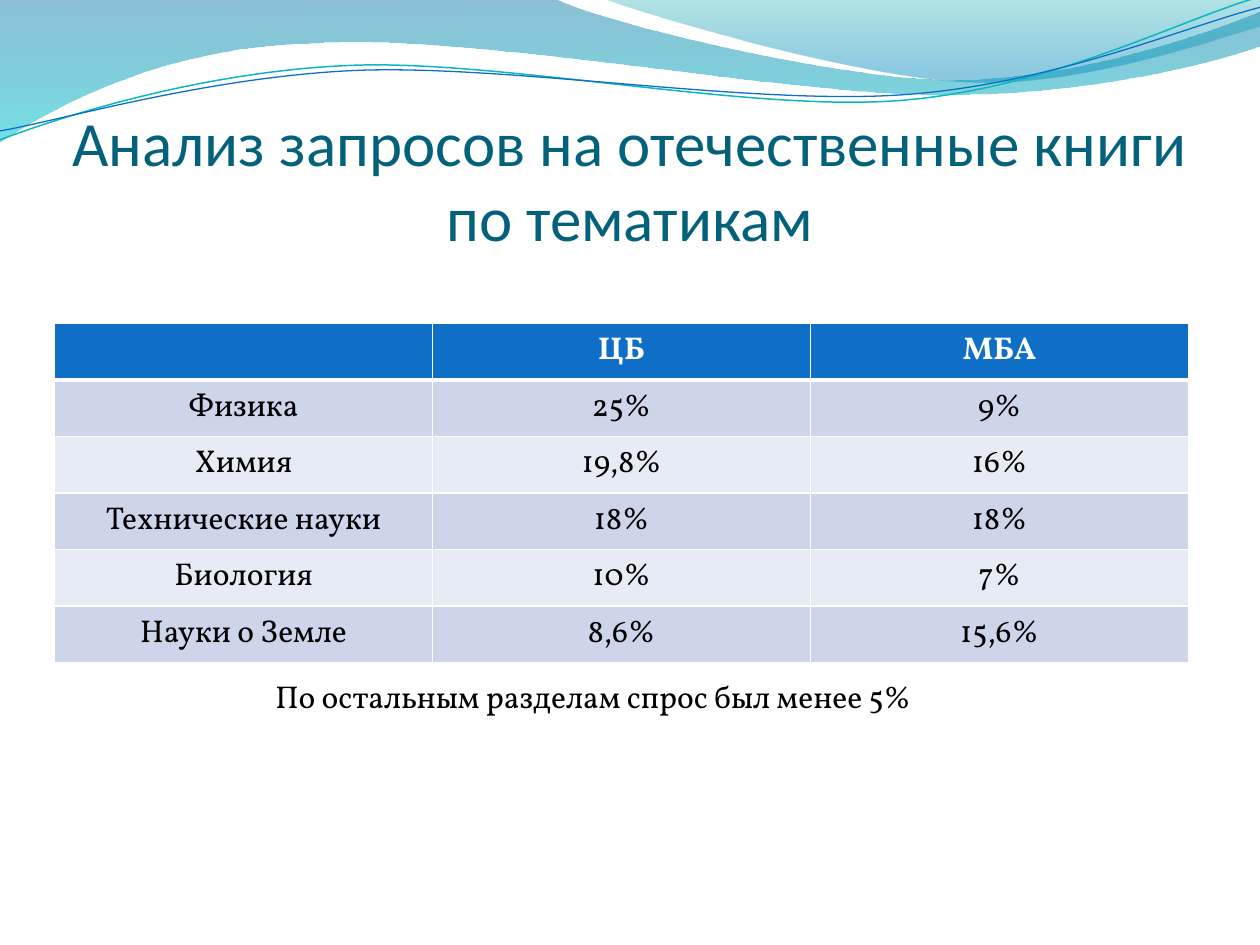
from lxml import etree
from pptx import Presentation
from pptx import util as u
from pptx.dml.color import RGBColor
from pptx.enum import text
from pptx.oxml import ns

COLORS = {
    "title": "04617B", "black": "000000", "white": "FFFFFF",
    "header": "0F6FC6", "odd": "CCD5EA", "even": "E7EBF5",
    "deep": "0074A1", "aqua": "00C6CF", "teal": "00A1A9", "sky": "008BBF",
    "teal_line": "0AB8BF", "blue_line": "0F6FC6",
}


def add_outline(start, segments, closed):
    """Draw line segments (1 point) and cubic curves (3 points), in cm."""
    builder = slide.shapes.build_freeform(u.Cm(start[0]), u.Cm(start[1]))
    builder.add_line_segments(
        [(u.Cm(x), u.Cm(y)) for segment in segments for x, y in segment], close=closed)
    outline = builder.convert_to_shape()
    outline.shadow.inherit = False
    # Join every three points of a curve into one cubic segment
    lines = iter(list(outline.element.spPr.iter(ns.qn("a:lnTo"))))
    for segment in segments:
        steps = [next(lines) for _ in segment]
        if len(steps) == 3:
            curve = etree.Element(ns.qn("a:cubicBezTo"))
            steps[0].addprevious(curve)
            for step in steps:
                curve.append(step[0])
                step.getparent().remove(step)
    return outline


def add_run(paragraph, wording, font, size, color, bold=False):
    run = paragraph.add_run()
    run.text = wording
    run.font.name, run.font.size, run.font.bold = font, u.Pt(size), bold
    run.font.color.rgb = RGBColor.from_string(COLORS[color])


prs = Presentation()
prs.slide_width, prs.slide_height = u.Cm(25.4), u.Cm(19.05)
slide = prs.slides.add_slide(prs.slide_layouts[6])

# Translucent waves: start, segments, gradient stops (position, colour, opacity %)
waves = [
    ((0, 0), [
        [(11.18, -0.03)],
        [(12.09, 0.43), (16.87, 1.6), (19.25, 1.6)],
        [(21.67, 1.6), (24.33, 0.66), (25.4, 0.23)],
        [(25.43, 0.91)],
        [(24.97, 1.12), (22.1, 1.93), (18.95, 1.91)],
        [(15.8, 1.91), (9.7, 0.71), (6.53, 0.86)],
        [(3.28, 0.91), (1.17, 2.11), (-0.03, 2.87)],
        [(0, 0)],
    ], [(0, "deep", 45), (1, "aqua", 55)]),
    ((12.17, -0.03), [
        [(12.93, 0.28), (17.32, 1.57), (19.53, 1.65)],
        [(21.74, 1.75), (24.41, 0.81), (25.4, 0.53)],
        [(25.4, 0)],
        [(12.17, -0.03)],
    ], [(0, "teal", 30), (0.8, "sky", 45)]),
]
for start, segments, stops in waves:
    wave = add_outline(start, segments, True)
    wave.line.fill.background()
    wave.fill.gradient()
    wave.fill.gradient_angle = 270
    for stop, (position, color, opacity) in zip(wave.fill.gradient_stops, stops):
        stop.position = position
        stop.color.rgb = RGBColor.from_string(COLORS[color])
    for rgb, (_, _, opacity) in zip(wave.element.spPr.iter(ns.qn("a:srgbClr")), stops):
        etree.SubElement(rgb, ns.qn("a:alpha"), val=str(opacity * 1000))

# Thin wavy lines
strands = [
    ((0, 2.82), [
        [(1.22, 2.36), (4.01, 1.45), (7.04, 1.32)],
        [(10.03, 1.19), (15.06, 2.26), (18.11, 2.03)],
        [(21.16, 1.8), (23.83, 0.38), (25.35, -0.05)],
    ], "teal_line", 0.85),
    ((0, 2.64), [
        [(1.19, 2.44), (4.17, 1.55), (7.19, 1.42)],
        [(10.24, 1.3), (15.16, 2.13), (18.21, 1.91)],
        [(21.23, 1.7), (23.9, 0.53), (25.4, 0.15)],
    ], "blue_line", 0.75),
]
for start, segments, color, width in strands:
    strand = add_outline(start, segments, False)
    strand.fill.background()
    strand.line.color.rgb = RGBColor.from_string(COLORS[color])
    strand.line.width = u.Pt(width)

# Title
title = slide.shapes.add_textbox(u.Cm(1.27), u.Cm(1.95), u.Cm(22.86), u.Cm(3.18)).text_frame
title.word_wrap = True
title.vertical_anchor = text.MSO_ANCHOR.BOTTOM
title.margin_left = title.margin_right = title.margin_bottom = 0
title.margin_top = u.Cm(0.13)
title.paragraphs[0].alignment = text.PP_ALIGN.CENTER
add_run(title.paragraphs[0], "Анализ запросов на отечественные книги по тематикам",
        "Calibri", 36, "title")

# Table of request shares
shares = [
    ("", "ЦБ", "МБА"),
    ("Физика", "25%", "9%"),
    ("Химия", "19,8%", "16%"),
    ("Технические науки", "18%", "18%"),
    ("Биология", "10%", "7%"),
    ("Науки о Земле", "8,6%", "15,6%"),
]
row_height = u.Cm(1.14)
table = slide.shapes.add_table(len(shares), 3, u.Cm(1.1), u.Cm(6.52),
                               u.Cm(22.86), row_height * len(shares)).table
for column in table.columns:
    column.width = u.Cm(7.62)
for r, row in enumerate(shares):
    table.rows[r].height = row_height
    fill = "header" if r == 0 else "odd" if r % 2 else "even"
    for c, wording in enumerate(row):
        cell = table.cell(r, c)
        cell.vertical_anchor = text.MSO_ANCHOR.MIDDLE
        # White borders, thicker between the header and the body
        tc_pr = cell._tc.get_or_add_tcPr()
        for side in "LRTB":
            thick = (r, side) in ((0, "B"), (1, "T"))
            border = etree.SubElement(tc_pr, ns.qn(f"a:ln{side}"), w=str(u.Pt(3 if thick else 1)))
            solid = etree.SubElement(border, ns.qn("a:solidFill"))
            etree.SubElement(solid, ns.qn("a:srgbClr"), val=COLORS["white"])
        cell.fill.solid()
        cell.fill.fore_color.rgb = RGBColor.from_string(COLORS[fill])
        paragraph = cell.text_frame.paragraphs[0]
        paragraph.alignment = text.PP_ALIGN.CENTER
        if wording:
            add_run(paragraph, wording, "Vollkorn", 18, "black" if r else "white", r == 0)

# Note under the table
note = slide.shapes.add_textbox(u.Cm(5.3), u.Cm(13.52), u.Cm(13.46), u.Cm(1.02)).text_frame
note.word_wrap = False
note.auto_size = text.MSO_AUTO_SIZE.SHAPE_TO_FIT_TEXT
add_run(note.paragraphs[0], "По остальным разделам спрос был менее 5%", "Vollkorn", 18, "black")

prs.save("out.pptx")
